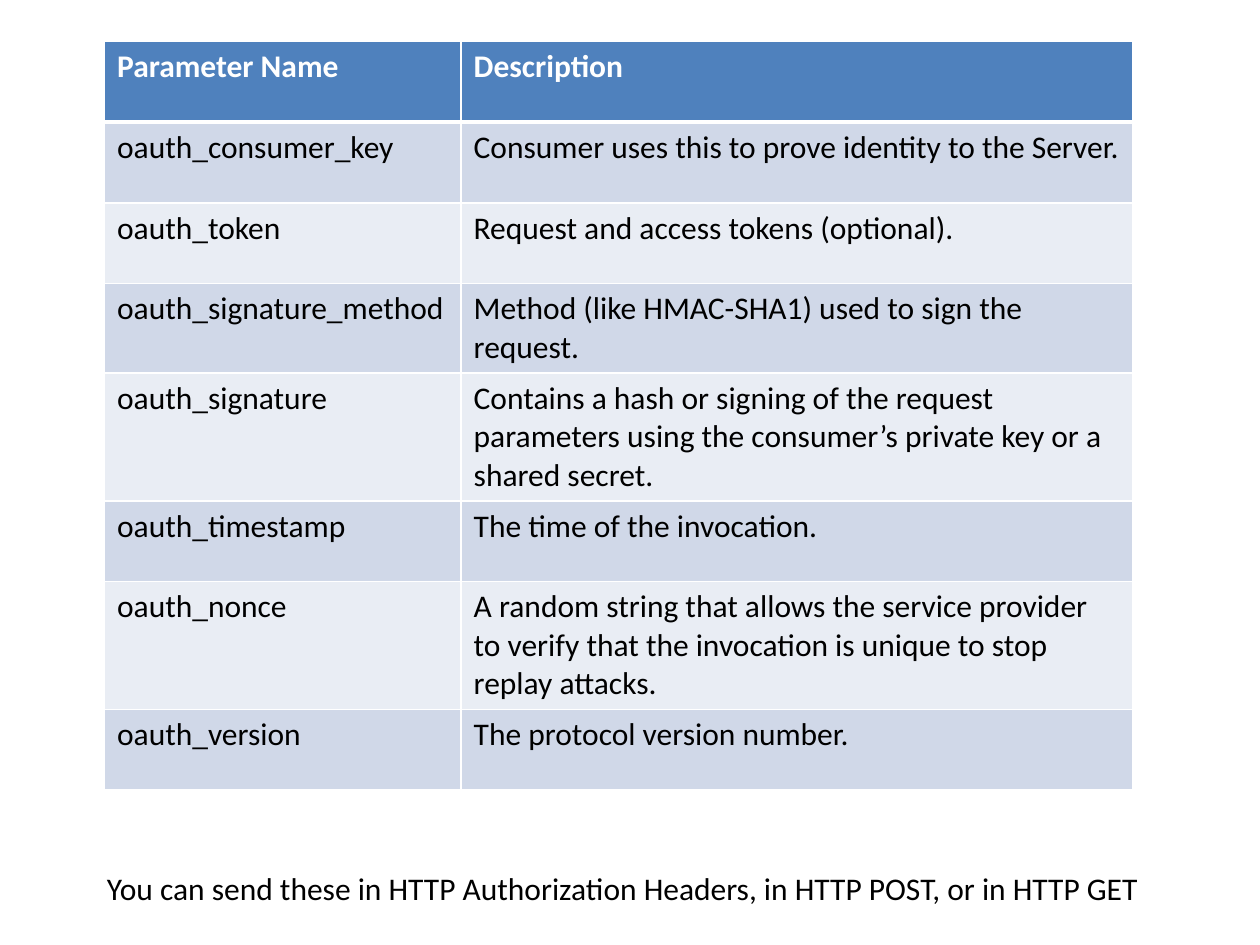
"""Build a slide with a table of OAuth parameters and a closing note."""
import pptx
import pptx.util
import pptx.dml.color
import pptx.oxml.ns
import lxml.etree

Inches, Pt = pptx.util.Inches, pptx.util.Pt

COLORS = {
    "head": "4F81BD",
    "odd": "D0D8E8",
    "even": "E9EDF4",
    "white": "FFFFFF",
    "black": "000000",
}
ROWS = [
    ("Parameter Name", "Description"),
    ("oauth_consumer_key", "Consumer uses this to prove identity to the Server."),
    ("oauth_token", "Request and access tokens (optional)."),
    ("oauth_signature_method", "Method (like HMAC-SHA1) used to sign the request."),
    ("oauth_signature", "Contains a hash or signing of the request parameters "
     "using the consumer’s private key or a shared secret."),
    ("oauth_timestamp", "The time of the invocation."),
    ("oauth_nonce", "A random string that allows the service provider to verify "
     "that the invocation is unique to stop replay attacks."),
    ("oauth_version", "The protocol version number."),
]
NOTE = "You can send these in HTTP Authorization Headers, in HTTP POST, or in HTTP GET"
WIDTHS = (2.83, 5.33)
HEIGHT = 0.64


def rgb(name):
    return pptx.dml.color.RGBColor.from_string(COLORS[name])


def style(para, color, bold=False):
    font = para.font
    font.name, font.size, font.bold = "Calibri", Pt(18), bold
    font.color.rgb = rgb(color)


def border(cell, widths):
    qn = pptx.oxml.ns.qn
    props = cell._tc.get_or_add_tcPr()
    for side, width in widths.items():
        line = lxml.etree.SubElement(props, qn("a:ln" + side), w=str(Pt(width)))
        fill = lxml.etree.SubElement(line, qn("a:solidFill"))
        lxml.etree.SubElement(fill, qn("a:srgbClr"), val=COLORS["white"])


def add_params(slide):
    frame = slide.shapes.add_table(
        len(ROWS), len(WIDTHS), Inches(0.83), Inches(0.33),
        Inches(sum(WIDTHS)), Inches(HEIGHT * len(ROWS)))
    table = frame.table
    for col, width in zip(table.columns, WIDTHS):
        col.width = Inches(width)
    for r, row in enumerate(ROWS):
        table.rows[r].height = Inches(HEIGHT)
        head = r == 0
        back = "head" if head else "odd" if r % 2 else "even"
        for c, text in enumerate(row):
            cell = table.cell(r, c)
            cell.text = text
            style(cell.text_frame.paragraphs[0], "white" if head else "black", head)
            border(cell, {"L": 1, "R": 1, "T": 3 if r == 1 else 1, "B": 3 if head else 1})
            cell.fill.solid()
            cell.fill.fore_color.rgb = rgb(back)


def add_note(slide):
    box = slide.shapes.add_textbox(Inches(0.75), Inches(6.85), Inches(8.48), Inches(0.4))
    box.text_frame.word_wrap = False
    box.text_frame.text = NOTE
    style(box.text_frame.paragraphs[0], "black")


def main():
    deck = pptx.Presentation()
    deck.slide_width, deck.slide_height = Inches(10), Inches(7.5)
    slide = deck.slides.add_slide(deck.slide_layouts[6])
    add_params(slide)
    add_note(slide)
    deck.save("out.pptx")


if __name__ == "__main__":
    main()
